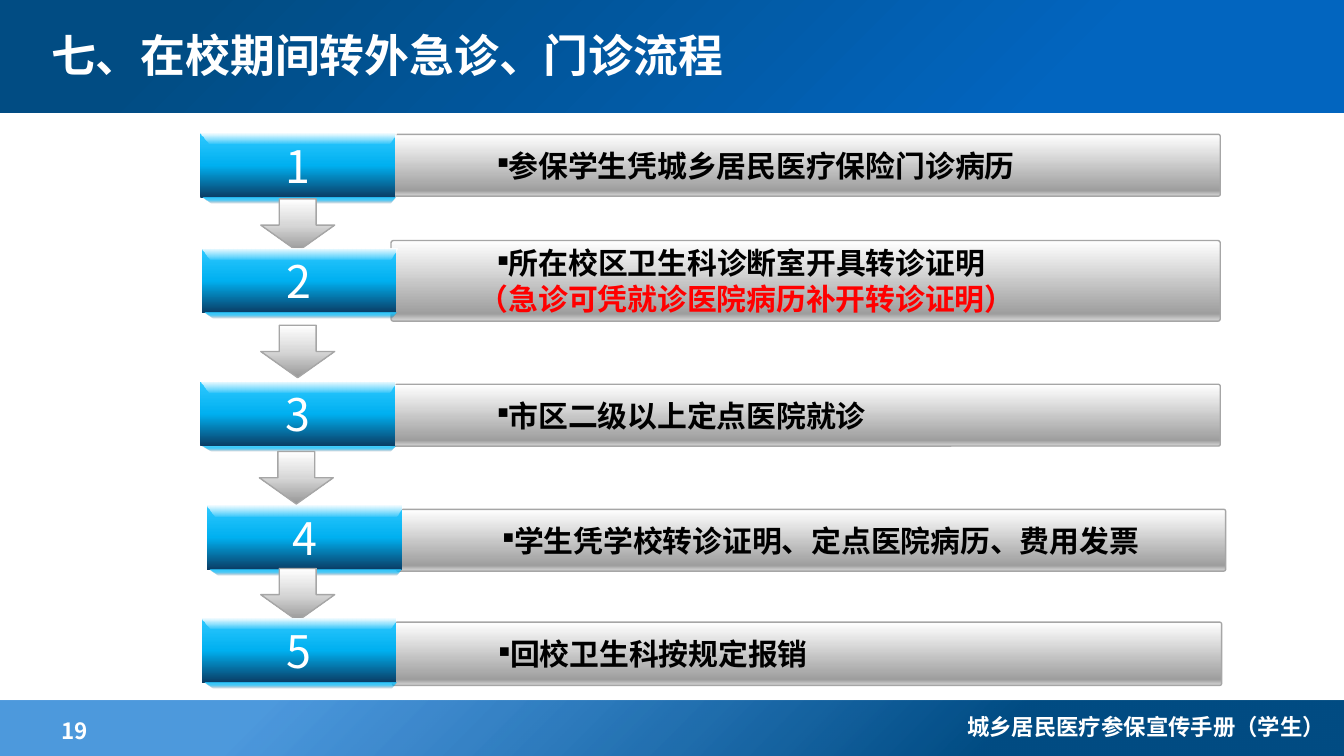
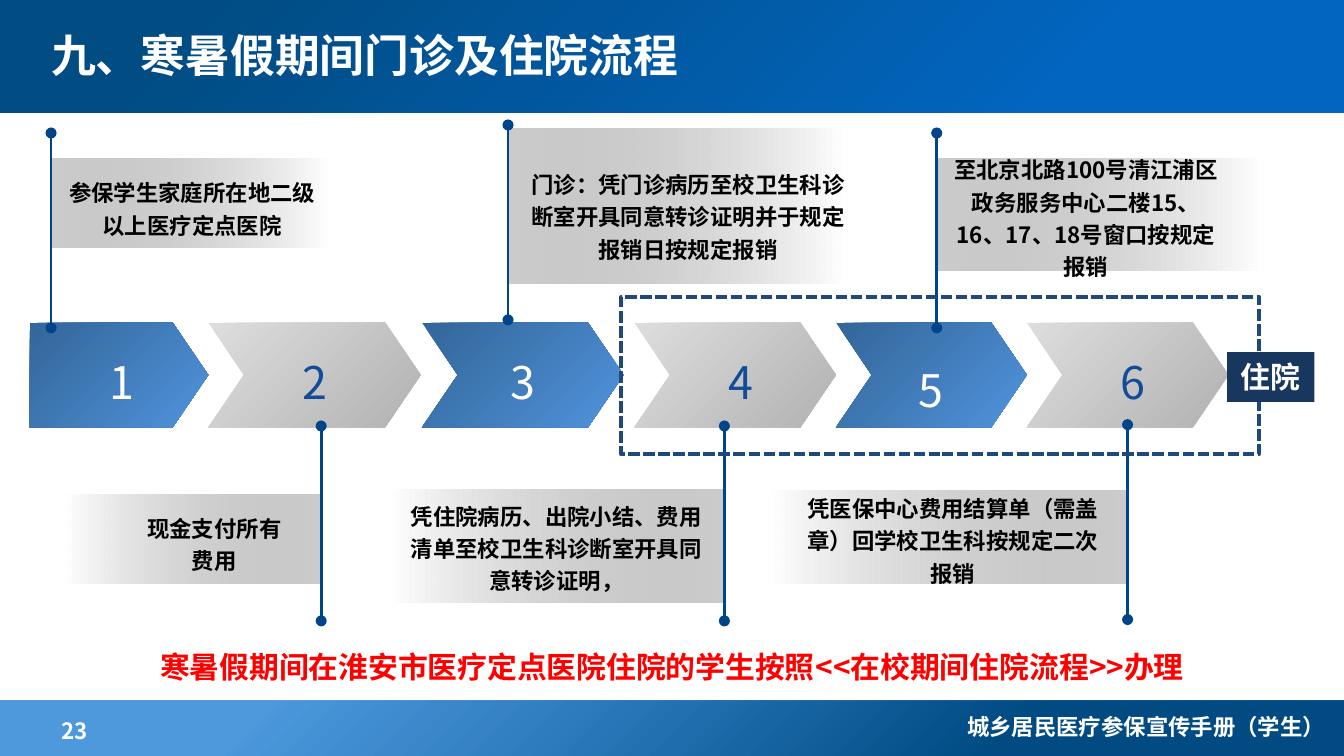
from lxml.etree import SubElement
from pptx import Presentation
from pptx.dml.color import RGBColor
from pptx.enum.dml import MSO_LINE
from pptx.enum.shapes import MSO_CONNECTOR, MSO_SHAPE
from pptx.enum.text import MSO_ANCHOR, PP_ALIGN
from pptx.oxml import parse_xml
from pptx.oxml.ns import nsdecls, qn
from pptx.util import Pt

PX = 9144  # EMU in one px, 100 px to the inch
FONT = "Noto Sans CJK SC"
TITLE_FONT = "Times New Roman"
WHITE, BLACK, RED = "FFFFFF", "000000", "FF0000"
NAVY, DEEP_BLUE, PIN_BLUE, DIGIT_BLUE = "17375E", "014C83", "00458A", "124B98"
FRAME_BLUE, EDGE_GREY = "1F497D", "A6A6A6"

# Gradients: (position, colour, opacity) in percent
TOP_BAND = [(21, "0265BF", 100), (86, DEEP_BLUE, 100)]
BOTTOM_BAND = [(26, DEEP_BLUE, 100), (80, "026DCE", 70)]
BAR = [(0, WHITE, 100), (91, "9E9E9E", 100), (100, "D9D9D9", 100)]
TILE = [(0, "0A3C64", 100), (50, "00B0F0", 100), (100, "2FC9FF", 100)]
LIP = [(0, "0A3C64", 0), (50, "00B0F0", 65), (100, "2FC9FF", 100)]
SHINE = [(0, WHITE, 100), (100, WHITE, 0)]
ARROW = [(0, "979797", 100), (50, "D7D7D7", 100), (100, WHITE, 100)]
PANEL = [(0, "808080", 40), (100, WHITE, 100)]
BLUE_STAGE = [(0, "336699", 100), (100, "5093DC", 100)]
GREY_STAGE = [(0, "DDDDDD", 100), (100, "B2B2B2", 100)]

rgb = RGBColor.from_string


def paint(shape, stops, angle=None, edge=None):
    """Fill with a gradient, linear at an angle or else radial from the lower right."""
    shape.shadow.inherit = False
    shape.fill.background()
    marks = "".join(
        f'<a:gs pos="{pos * 1000}"><a:srgbClr val="{colour}">'
        f'<a:alpha val="{opacity * 1000}"/></a:srgbClr></a:gs>'
        for pos, colour, opacity in stops)
    if angle is None:
        course = '<a:path path="circle"><a:fillToRect l="100000" t="100000"/></a:path>'
    else:
        course = f'<a:lin ang="{angle * 60000}" scaled="0"/>'
    gradient = parse_xml(f'<a:gradFill {nsdecls("a")} rotWithShape="1">'
                         f'<a:gsLst>{marks}</a:gsLst>{course}</a:gradFill>')
    properties = shape.element.spPr
    properties.replace(properties.find(qn("a:noFill")), gradient)
    if edge:
        shape.line.color.rgb = rgb(edge)
        shape.line.width = Pt(0.75)
    else:
        shape.line.fill.background()


def write(shape, text, size, colour, bold=True, align=PP_ALIGN.CENTER,
          anchor=MSO_ANCHOR.MIDDLE, spacing=None, wrap=True, font=FONT):
    frame = shape.text_frame
    frame.text = text
    frame.word_wrap = wrap
    frame.vertical_anchor = anchor
    for para in frame.paragraphs:
        para.alignment = align
        if spacing:
            para.line_spacing = spacing
        para.font.size = Pt(size)
        para.font.bold = bold
        para.font.color.rgb = rgb(colour)
        para.font.name = font
    for properties in shape.element.iter(qn("a:defRPr")):
        SubElement(properties, qn("a:ea"), typeface=FONT)


deck = Presentation()
deck.slide_width = 1000 * PX
deck.slide_height = deck.slide_width * 9 // 16
layout = deck.slide_layouts[5]
for placeholder in list(layout.placeholders)[1:]:
    placeholder.element.getparent().remove(placeholder.element)

# Titles and page numbers
pages = []
for title_text, number in (("七、在校期间转外急诊、门诊流程", "19"),
                           ("九、寒暑假期间门诊及住院流程", "23")):
    page = deck.slides.add_slide(layout)
    title = page.shapes.title
    title.left, title.top, title.width, title.height = [n * PX for n in (28, 5, 638, 71)]
    write(title, title_text, 24, WHITE, align=PP_ALIGN.LEFT, font=TITLE_FONT)
    pages.append(page)
    if len(pages) == 1:
        # Bands and footer are drawn here, then moved to the layout both slides use
        shapes = page.shapes
        bottom_band = shapes.add_shape(MSO_SHAPE.RECTANGLE, *[n * PX for n in (0, 521, 1000, 42)])
        paint(bottom_band, BOTTOM_BAND)
        top_band = shapes.add_shape(MSO_SHAPE.RECTANGLE, *[n * PX for n in (0, -3, 1003, 87)])
        paint(top_band, TOP_BAND)
        footer = shapes.add_textbox(*[n * PX for n in (689, 526, 307, 26)])
        write(footer, "城乡居民医疗参保宣传手册（学生）", 12, WHITE,
              align=PP_ALIGN.RIGHT, anchor=MSO_ANCHOR.TOP)
        for index, shared in enumerate((bottom_band, top_band, footer), 2):
            layout.shapes.element.insert(index, shared.element)
    page_number = page.shapes.add_textbox(*[n * PX for n in (36, 529, 153, 26)])
    write(page_number, number, 12, WHITE, align=PP_ALIGN.LEFT, anchor=MSO_ANCHOR.TOP)

steps_page, stages_page = pages

# Slide 1: five steps, each with a bar, a numbered tile and an arrow to the next
# Text, bar (left, top, height), tile (left, top), arrow (left, top)
STEPS = [
    ("参保学生凭城乡居民医疗保险门诊病历", (291, 100, 46), (149, 99), (194, 148)),
    ("所在校区卫生科诊断室开具转诊证明\n（急诊可凭就诊医院病历补开转诊证明）",
     (291, 179, 60), (150, 185), (194, 242)),
    ("市区二级以上定点医院就诊", (291, 286, 46), (149, 284), (193, 336)),
    ("学生凭学校转诊证明、定点医院病历、费用发票", (295, 379, 46), (154, 376), (194, 423)),
    ("回校卫生科按规定报销", (292, 463, 47), (150, 460), None),
]
for number, (text, (left, top, height), (x, y), arrow_place) in enumerate(STEPS, 1):
    bar = steps_page.shapes.add_shape(MSO_SHAPE.ROUNDED_RECTANGLE,
                                      *[n * PX for n in (left, top, 617, height)])
    bar.adjustments[0] = 0.03
    paint(bar, BAR, 90, EDGE_GREY)
    write(bar, text, 16, BLACK, align=PP_ALIGN.LEFT)
    for index, node in enumerate(bar.element.iter(qn("a:p"))):
        properties = node.get_or_add_pPr()
        properties.set("marL", str(30 * PX))
        properties.set("indent", str((25 if index else 39) * PX))
        if index == 0:
            properties.insert(0, parse_xml(f'<a:buSzPct {nsdecls("a")} val="50000"/>'))
            properties.insert(1, parse_xml(f'<a:buChar {nsdecls("a")} char="■"/>'))
    for para in bar.text_frame.paragraphs[1:]:
        para.font.color.rgb = rgb(RED)

    group = steps_page.shapes.add_group_shape()
    tile = group.shapes.add_shape(MSO_SHAPE.ROUNDED_RECTANGLE,
                                  *[n * PX for n in (x, y, 145, 48)])
    tile.adjustments[0] = 0
    paint(tile, TILE, 270)
    write(tile, str(number), 24, WHITE, bold=False)
    for stops, angle, outline in (
            (LIP, 270, [(2, 48), (9, 52), (141, 52), (145, 48)]),
            (SHINE, 90, [(0, 0), (146, 0), (140, 8), (7, 8)])):
        corners = [(x + dx, y + dy) for dx, dy in outline]
        builder = group.shapes.build_freeform(*corners[0], scale=PX)
        builder.add_line_segments(corners[1:], close=True)
        paint(builder.convert_to_shape(), stops, angle)

    if arrow_place:
        arrow = steps_page.shapes.add_shape(MSO_SHAPE.DOWN_ARROW,
                                            *[n * PX for n in (*arrow_place, 55, 39)])
        paint(arrow, ARROW, 270, EDGE_GREY)

# Slide 2: six stages, notes of odd ones above and of even ones below
# Note, note box, panel, stage (left, width), digit (left, top, width), pin (x, top)
STAGES = [
    ("参保学生家庭所在地二级以上医疗定点医院", (39, 93, 208, 121),
     (39, 118, 208, 66), (22, 133), (72, 259, 33), (38, 99)),
    ("现金支付所有费用", (97, 368, 125, 70),
     (47, 368, 192, 66), (155, 158), (214, 259, 41), (239, 317)),
    ("门诊：凭门诊病历至校卫生科诊断室开具同意转诊证明并于规定报销日按规定报销",
     (378, 99, 268, 121), (379, 96, 251, 115), (314, 150), (364, 259, 50), (378, 93)),
    ("凭住院病历、出院小结、费用清单至校卫生科诊断室开具同意转诊证明，",
     (293, 365, 242, 82), (289, 364, 250, 84), (472, 150), (530, 259, 42), (539, 317)),
    ("至北京北路100号清江浦区政务服务中心二楼15、16、17、18号窗口按规定报销",
     (697, 100, 222, 121), (697, 118, 242, 83), (622, 142), (672, 265, 42), (697, 99)),
    ("凭医保中心费用结算单（需盖章）回学校卫生科按规定二次报销",
     (583, 353, 252, 95), (572, 365, 267, 69), (764, 150), (822, 259, 42), (839, 316)),
]
shapes = stages_page.shapes
for number, (text, note_place, panel_place, (left, width), digit, pin_place) in enumerate(STAGES, 1):
    above = number % 2 == 1
    panel = shapes.add_shape(MSO_SHAPE.RECTANGLE, *[n * PX for n in panel_place])
    paint(panel, PANEL, 0 if above else 180)
    note = shapes.add_textbox(*[n * PX for n in note_place])
    write(note, text, 12, BLACK, spacing=1.2)

    stage = shapes.add_shape(MSO_SHAPE.PENTAGON if number == 1 else MSO_SHAPE.CHEVRON,
                             *[n * PX for n in (left, 240, width, 78)])
    stage.adjustments[0] = 0.34
    paint(stage, BLUE_STAGE if above else GREY_STAGE, 45)
    digit_left, digit_top, digit_width = digit
    label = shapes.add_textbox(*[n * PX for n in (digit_left, digit_top, digit_width, 35)])
    write(label, str(number), 24, WHITE if above else DIGIT_BLUE, bold=False,
          anchor=MSO_ANCHOR.TOP, wrap=False)

    x, top = pin_place
    pin = shapes.add_connector(MSO_CONNECTOR.STRAIGHT,
                               *[n * PX for n in (x, top + 145, x, top)])
    pin.line.color.rgb = rgb(PIN_BLUE)
    pin.line.width = Pt(1.5)
    properties = pin.element.spPr
    for end in ("a:headEnd", "a:tailEnd"):
        SubElement(properties.find(qn("a:ln")), qn(end), type="oval")
    SubElement(properties, qn("a:effectLst"))

hospital_frame = shapes.add_shape(MSO_SHAPE.RECTANGLE, *[n * PX for n in (462, 221, 475, 117)])
hospital_frame.shadow.inherit = False
hospital_frame.fill.background()
hospital_frame.line.color.rgb = rgb(FRAME_BLUE)
hospital_frame.line.width = Pt(2)
hospital_frame.line.dash_style = MSO_LINE.SQUARE_DOT

hospital_tag = shapes.add_shape(MSO_SHAPE.RECTANGLE, *[n * PX for n in (913, 262, 65, 37)])
hospital_tag.shadow.inherit = False
hospital_tag.fill.solid()
hospital_tag.fill.fore_color.rgb = rgb(NAVY)
hospital_tag.line.fill.background()
write(hospital_tag, "住院", 16, WHITE, wrap=False)

reminder = shapes.add_textbox(*[n * PX for n in (0, 478, 1000, 37)])
write(reminder, "寒暑假期间在淮安市医疗定点医院住院的学生按照<<在校期间住院流程>>办理",
      16, RED, anchor=MSO_ANCHOR.TOP)

deck.save("out.pptx")
